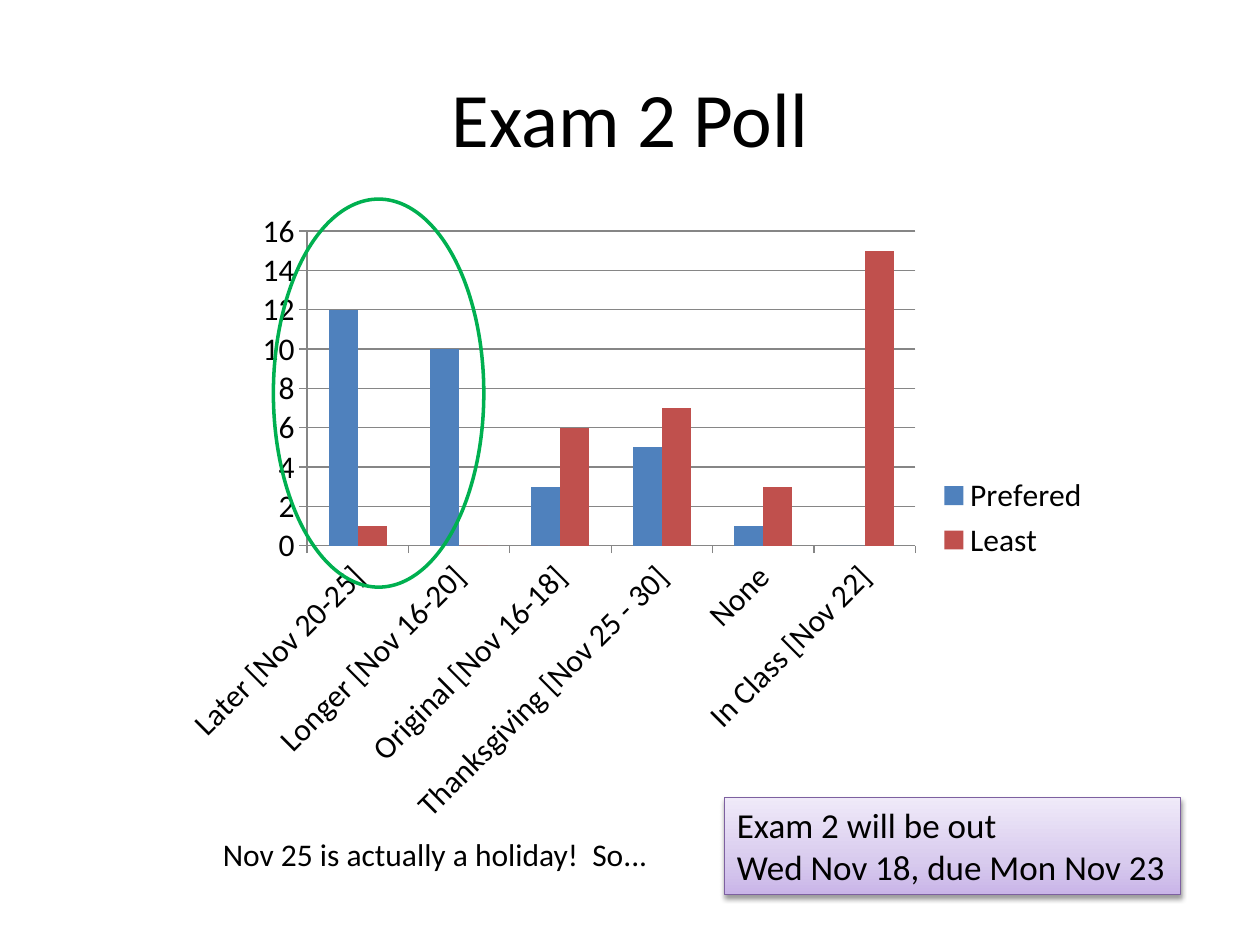
from lxml.etree import fromstring
from pptx import Presentation
from pptx.chart.data import CategoryChartData
from pptx.dml.color import RGBColor
from pptx.enum.chart import XL_CHART_TYPE, XL_LEGEND_POSITION, XL_TICK_MARK
from pptx.enum.shapes import MSO_SHAPE
from pptx.enum.text import MSO_ANCHOR, MSO_AUTO_SIZE, PP_ALIGN
from pptx.util import Inches, Pt

SPACE = 'xmlns:a="http://schemas.openxmlformats.org/drawingml/2006/main"'


def color(text):
    return RGBColor.from_string(text)


def place(*box):
    return [Inches(side) for side in box]


class Deck:
    face = "Calibri"
    ink = "000000"

    def __init__(self):
        self.show = Presentation()
        self.show.slide_width, self.show.slide_height = place(10, 7.5)
        self.slide = self.show.slides.add_slide(self.show.slide_layouts[5])

    def style(self, font, size):
        font.name = self.face
        font.size = Pt(size)
        font.color.rgb = color(self.ink)

    def label(self, shape, text, size, align=PP_ALIGN.LEFT):
        frame = shape.text_frame
        frame.text = text
        for para in frame.paragraphs:
            para.alignment = align
            for run in para.runs:
                self.style(run.font, size)
        return frame

    def title(self, box, text):
        shape = self.slide.shapes.title
        shape.left, shape.top, shape.width, shape.height = place(*box)
        frame = self.label(shape, text, 44, PP_ALIGN.CENTER)
        frame.vertical_anchor = MSO_ANCHOR.MIDDLE

    def chart(self, box, names, series):
        data = CategoryChartData()
        data.categories = names
        for name, values, _ in series:
            data.add_series(name, values)
        chart = self.slide.shapes.add_chart(
            XL_CHART_TYPE.COLUMN_CLUSTERED, *place(*box), data).chart
        self.style(chart.font, 18)
        chart.has_title = False
        chart.has_legend = True
        chart.legend.position = XL_LEGEND_POSITION.RIGHT
        chart.legend.include_in_layout = False
        plot = chart.plots[0]
        plot.gap_width = 150
        plot.overlap = 0
        plot.vary_by_categories = False
        for bars, (_, _, fill) in zip(plot.series, series):
            bars.format.fill.solid()
            bars.format.fill.fore_color.rgb = color(fill)
        base, scale = chart.category_axis, chart.value_axis
        scale.has_major_gridlines = True
        scale.minimum_scale, scale.maximum_scale, scale.major_unit = 0, 16, 2
        for axis in (base, scale):
            axis.major_tick_mark = XL_TICK_MARK.OUTSIDE
            self.style(axis.tick_labels.font, 18)
        for part in (base, scale, scale.major_gridlines):
            part.format.line.color.rgb = color("868686")
            part.format.line.width = Pt(0.75)
        turn = base._element.txPr.find("{*}bodyPr")
        turn.set("rot", "-2700000")
        turn.set("vert", "horz")

    def shape(self, kind, box, line, width):
        shape = self.slide.shapes.add_shape(kind, *place(*box))
        shape.shadow.inherit = False
        shape.fill.background()
        shape.line.color.rgb = color(line)
        shape.line.width = Pt(width)
        return shape

    def note(self, box, text):
        shape = self.slide.shapes.add_textbox(*place(*box))
        frame = self.label(shape, text, 18)
        frame.word_wrap = False
        frame.auto_size = MSO_AUTO_SIZE.SHAPE_TO_FIT_TEXT

    def panel(self, box, text, stops):
        shape = self.shape(MSO_SHAPE.RECTANGLE, box, "7D60A0", 0.75)
        props = shape._element.spPr
        marks = "".join(
            f'<a:gs pos="{at * 1000}"><a:srgbClr val="{tone}"/></a:gs>'
            for at, tone in stops)
        fill = fromstring(
            f'<a:gradFill {SPACE} rotWithShape="1"><a:gsLst>{marks}</a:gsLst>'
            '<a:lin ang="16200000" scaled="0"/></a:gradFill>')
        props.replace(props.find("{*}noFill"), fill)
        shade = fromstring(
            f'<a:outerShdw {SPACE} blurRad="{Pt(3.1)}" dist="{Pt(1.6)}" '
            'dir="5400000" rotWithShape="0"><a:srgbClr val="000000">'
            '<a:alpha val="38000"/></a:srgbClr></a:outerShdw>')
        props.find("{*}effectLst").append(shade)
        frame = self.label(shape, text, 20)
        frame.word_wrap = False
        frame.auto_size = MSO_AUTO_SIZE.SHAPE_TO_FIT_TEXT
        frame.vertical_anchor = MSO_ANCHOR.TOP


def main():
    deck = Deck()
    deck.title((0.5, 0.3, 9, 1.25), "Exam 2 Poll")
    deck.chart(
        (1.33, 1.58, 7.42, 5.06),
        ["Later [Nov 20-25]", "Longer [Nov 16-20]", "Original [Nov 16-18]",
         "Thanksgiving [Nov 25 - 30]", "None", "In Class [Nov 22]"],
        [("Prefered", (12, 10, 3, 5, 1, 0), "4F81BD"),
         ("Least", (1, 0, 6, 7, 3, 15), "C0504D")])
    deck.shape(MSO_SHAPE.OVAL, (2.17, 1.58, 1.67, 3.08), "00B050", 2)
    deck.note((1.67, 6.58, 3.61, 0.4), "Nov 25 is actually a holiday!  So...")
    deck.panel((5.75, 6.33, 3.62, 0.77),
               "Exam 2 will be out\nWed Nov 18, due Mon Nov 23",
               [(0, "C9B5E8"), (35, "D8CBEE"), (100, "F0EAF9")])
    deck.show.save("out.pptx")


if __name__ == "__main__":
    main()
